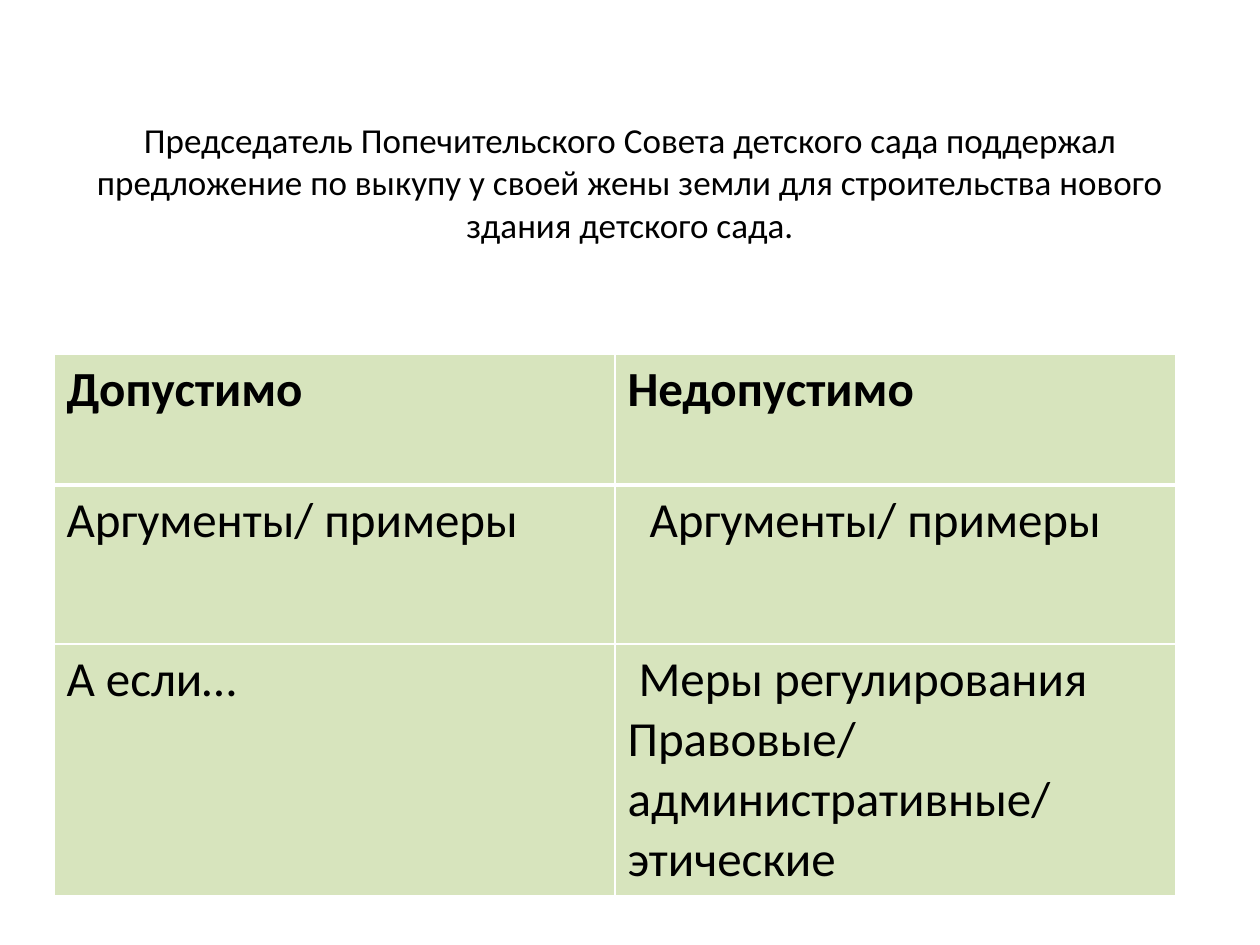
import dataclasses

import pptx
import pptx.dml.color
import pptx.enum.text
import pptx.oxml
import pptx.oxml.ns
import pptx.util


@dataclasses.dataclass(frozen=True)
class Theme:
    font: str = "Calibri"
    ink: str = "000000"
    cell_fill: str = "D7E4BD"
    border: str = "FFFFFF"
    title_size: int = 20
    table_size: int = 28
    border_width: int = 1
    header_rule: int = 3


def px(length):
    return pptx.util.Emu(round(length * 914400 / 126))


class SlideBuilder:
    def __init__(self, slide, theme):
        self.slide = slide
        self.theme = theme

    def add_run(self, paragraph, text, size, bold=False):
        run = paragraph.add_run()
        run.text = text
        run.font.name = self.theme.font
        run.font.size = pptx.util.Pt(size)
        run.font.bold = bold
        run.font.color.rgb = pptx.dml.color.RGBColor.from_string(self.theme.ink)

    def add_title(self, text, left, top, width, height):
        title = self.slide.shapes.add_textbox(px(left), px(top), px(width), px(height))
        frame = title.text_frame
        frame.word_wrap = True
        frame.vertical_anchor = pptx.enum.text.MSO_ANCHOR.MIDDLE
        paragraph = frame.paragraphs[0]
        paragraph.alignment = pptx.enum.text.PP_ALIGN.CENTER
        self.add_run(paragraph, text, self.theme.title_size)

    def set_borders(self, cell, top, bottom):
        """Draw the four sides; top and bottom are widths in points."""
        properties = cell._tc.get_or_add_tcPr()
        side = self.theme.border_width
        widths = {"lnL": side, "lnR": side, "lnT": top, "lnB": bottom}
        for position, (tag, width) in enumerate(widths.items()):
            line = pptx.oxml.parse_xml(
                f'<a:{tag} {pptx.oxml.ns.nsdecls("a")} w="{pptx.util.Pt(width)}">'
                f'<a:solidFill><a:srgbClr val="{self.theme.border}"/></a:solidFill>'
                f"</a:{tag}>"
            )
            properties.insert(position, line)

    def fill_cell(self, cell, lines, bold):
        """Write lines of (text, first-line indent in px) on the cell colour."""
        cell.fill.solid()
        cell.fill.fore_color.rgb = pptx.dml.color.RGBColor.from_string(self.theme.cell_fill)
        frame = cell.text_frame
        for number, (text, indent) in enumerate(lines):
            paragraph = frame.add_paragraph() if number else frame.paragraphs[0]
            if indent:
                paragraph._p.get_or_add_pPr().set("indent", str(px(indent)))
            self.add_run(paragraph, text, self.theme.table_size, bold)

    def add_table(self, rows, left, top, column_width, row_heights):
        columns = len(rows[0])
        table = self.slide.shapes.add_table(
            len(rows), columns, px(left), px(top),
            px(column_width * columns), px(sum(row_heights)),
        ).table
        for column in table.columns:
            column.width = px(column_width)
        thin, thick = self.theme.border_width, self.theme.header_rule
        for r, (cells, height) in enumerate(zip(rows, row_heights)):
            table.rows[r].height = px(height)
            for c, lines in enumerate(cells):
                cell = table.cell(r, c)
                self.fill_cell(cell, lines, bold=r == 0)
                self.set_borders(cell, thick if r == 1 else thin, thick if r == 0 else thin)


def main():
    presentation = pptx.Presentation()
    presentation.slide_width = px(1260)
    presentation.slide_height = px(945)
    slide = presentation.slides.add_slide(presentation.slide_layouts[6])
    builder = SlideBuilder(slide, Theme())

    builder.add_title(
        "Председатель Попечительского Совета детского сада поддержал предложение "
        "по выкупу у своей жены земли для строительства нового здания детского сада.",
        63, 39, 1134, 286,
    )
    arguments = "Аргументы/ примеры"
    rows = [
        [[("Допустимо", 0)], [("Недопустимо", 0)]],
        [[(arguments, 0)], [(arguments, 22)]],
        [
            [("А если…", 0)],
            [("Меры регулирования", 11), ("Правовые/ административные/ этические", 0)],
        ],
    ]
    builder.add_table(rows, 54, 354, 561, [131, 159, 252])
    presentation.save("out.pptx")


if __name__ == "__main__":
    main()
